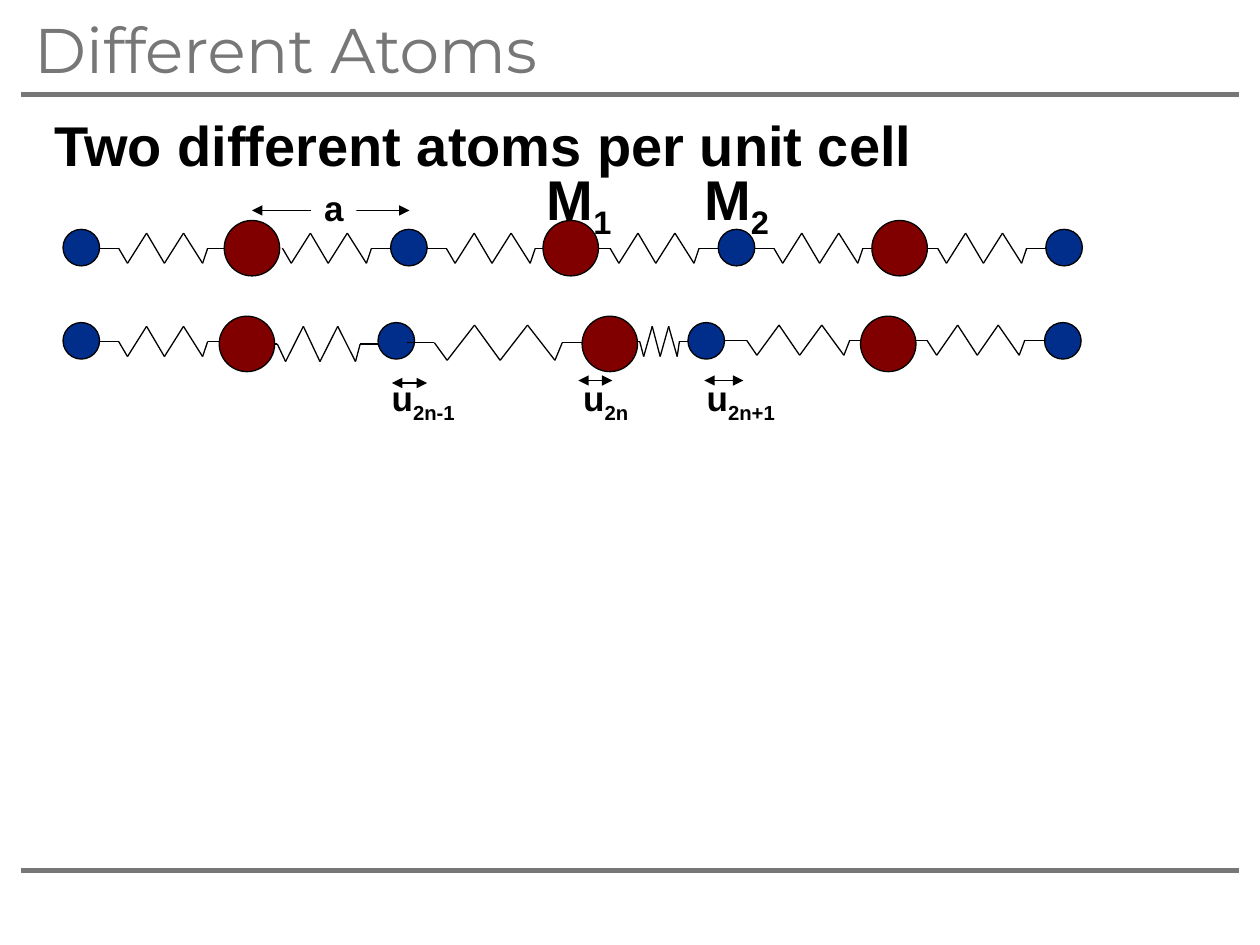
from pptx import Presentation
from pptx.dml.color import RGBColor
from pptx.enum.shapes import MSO_CONNECTOR, MSO_SHAPE
from pptx.enum.text import MSO_ANCHOR, MSO_AUTO_SIZE, PP_ALIGN
from pptx.oxml.ns import qn
from pptx.util import Inches, Pt
from lxml import etree

STRAIGHT = MSO_CONNECTOR.STRAIGHT
OVAL, RECT = MSO_SHAPE.OVAL, MSO_SHAPE.RECTANGLE
TOP = MSO_ANCHOR.TOP
LEFT, CENTER = PP_ALIGN.LEFT, PP_ALIGN.CENTER
NO_FIT = MSO_AUTO_SIZE.NONE

GRAY = RGBColor(0x77, 0x77, 0x77)
BLACK = RGBColor(0x00, 0x00, 0x00)
WHITE = RGBColor(0xFF, 0xFF, 0xFF)
BLUE = RGBColor(0x00, 0x2E, 0x8A)
RED = RGBColor(0x80, 0x00, 0x00)

SMALL, LARGE = 0.29, 0.44  # atom diameters
# Spring outline: share of its length, height as a multiple of the amplitude
SPRING = [(0, 0), (0.15, 0), (0.22, 1), (0.37, -1), (0.51, 1),
          (0.66, -1), (0.81, 1), (0.85, 0), (1, 0)]


class SlideBuilder:
    """Holds the text style and the slide being built."""

    font, color = "Arial", BLACK

    def __init__(self, prs):
        self.s = prs.slides.add_slide(prs.slide_layouts[1])

    def add_text(self, sp, runs, size, font=None, color=None, bold=True,
                 align=LEFT, wrap=False, tab=None):
        """Fill a shape with (text, is_subscript) runs."""
        tf = sp.text_frame
        tf.auto_size, tf.word_wrap, tf.vertical_anchor = NO_FIT, wrap, TOP
        p = tf.paragraphs[0]
        p.alignment, p.space_before = align, Pt(0)
        pPr = p._p.get_or_add_pPr()
        if sp.is_placeholder:
            pPr.set("marL", "0")
            pPr.set("indent", "0")
            etree.SubElement(pPr, qn("a:buNone"))
        if tab:
            tabs = etree.SubElement(pPr, qn("a:tabLst"))
            etree.SubElement(tabs, qn("a:tab"), pos=str(Inches(tab)), algn="l")
        for text, subscript in runs:
            r = p.add_run()
            r.text = text
            r.font.size, r.font.bold = Pt(size), bold
            r.font.name = font or self.font
            r.font.color.rgb = color or self.color
            if subscript:
                r._r.get_or_add_rPr().set("baseline", "-25000")

    def placeholder(self, sp, box, text, size, **style):
        sp.left, sp.top, sp.width, sp.height = map(Inches, box)
        self.add_text(sp, [(text, False)], size, **style)

    def label(self, box, runs, size=20, **style):
        sp = self.s.shapes.add_textbox(*map(Inches, box))
        self.add_text(sp, runs, size, **style)

    def shape(self, kind, box, fill, outline=None):
        sp = self.s.shapes.add_shape(kind, *map(Inches, box))
        sp.shadow.inherit = False
        sp.fill.solid()
        sp.fill.fore_color.rgb = fill
        if outline is None:
            sp.line.fill.background()
        else:
            sp.line.color.rgb, sp.line.width = outline, Pt(0.75)
        return sp

    def atom(self, x, y, size, fill):
        self.shape(OVAL, (x, y, size, size), fill, BLACK)

    def line(self, start, end, color=BLACK, width=0.75, arrows=False, shapes=None):
        shapes = shapes or self.s.shapes
        c = shapes.add_connector(STRAIGHT, *map(Inches, (*start, *end)))
        c.line.color.rgb, c.line.width = color, Pt(width)
        spPr = c._element.spPr
        if arrows:
            for tag in ("a:headEnd", "a:tailEnd"):
                etree.SubElement(spPr.find(qn("a:ln")), qn(tag), type="triangle")
        etree.SubElement(spPr, qn("a:effectLst"))

    def spring(self, x0, x1, y, amplitude=0.12, lead=True):
        group = self.s.shapes.add_group_shape()
        points = [(x0 + f * (x1 - x0), y + h * amplitude) for f, h in SPRING]
        if not lead:
            points = points[1:]
        for start, end in zip(points, points[1:]):
            # An empty shape collection is falsy, so the first line is safe
            # only when the group itself is asked for its shapes
            self.line(start, end, shapes=group.shapes)


def main():
    prs = Presentation()
    prs.slide_width, prs.slide_height = Inches(10), Inches(7.5)
    b = SlideBuilder(prs)

    # Rules, title and heading
    for y in (0.75, 6.91):
        b.line((0.17, y), (9.83, y), GRAY, 3)
    title, body = b.s.placeholders
    b.placeholder(title, (0.17, 0.03, 4.56, 0.71), "Different Atoms", 36,
                  font="Montserrat", color=GRAY, bold=False)
    b.placeholder(body, (0.33, 0.83, 9.5, 0.64),
                  "Two different atoms per unit cell", 32, wrap=True)

    # Chain at rest: evenly spaced springs
    pitch = 1.3
    for i in range(4):
        b.atom(0.5 + 2 * pitch * i, 1.82, SMALL, BLUE)
    for i in range(6):
        x = 0.79 + pitch * i
        b.spring(x, x + 1.01, 1.97, lead=i != 1)
    for x in (1.78, 4.31, 6.92):
        b.atom(x, 1.75, LARGE, RED)

    # Spacing arrow with its label
    b.line((2, 1.67), (3.25, 1.67), arrows=True)
    sp = b.shape(RECT, (2.47, 1.43, 0.36, 0.3), WHITE)
    b.add_text(sp, [("a", False)], 20, align=CENTER)

    # Displaced chain: springs stretched or squeezed
    for x in (0.5, 3, 5.46, 8.29):
        b.atom(x, 2.56, SMALL, BLUE)
    for x0, x1, y, amplitude in [
            (0.79, 1.8, 2.71, 0.12), (2.06, 3, 2.73, 0.14),
            (3.23, 4.68, 2.72, 0.14), (5.01, 5.46, 2.71, 0.12),
            (5.75, 6.92, 2.7, 0.12), (7.19, 8.3, 2.7, 0.12)]:
        b.spring(x0, x1, y, amplitude)
    for x in (1.74, 4.62, 6.83):
        b.atom(x, 2.51, LARGE, RED)

    # Displacement arrows and labels
    for x0, x1, y, left, width, index in [
            (3.11, 3.39, 3.04, 3.01, 0.76, "2n-1"),
            (4.59, 4.86, 3.02, 4.53, 0.59, "2n"),
            (5.59, 5.9, 3.02, 5.51, 0.8, "2n+1")]:
        b.line((x0, y), (x1, y), arrows=True)
        b.label((left, 2.94, width, 0.44), [("u", False), (index, True)])

    # Mass labels
    b.label((4.24, 1.26, 5.59, 0.64),
            [("M", False), ("1", True), ("\tM", False), ("2", True)],
            32, wrap=True, tab=1.25)

    prs.save("out.pptx")


if __name__ == "__main__":
    main()
